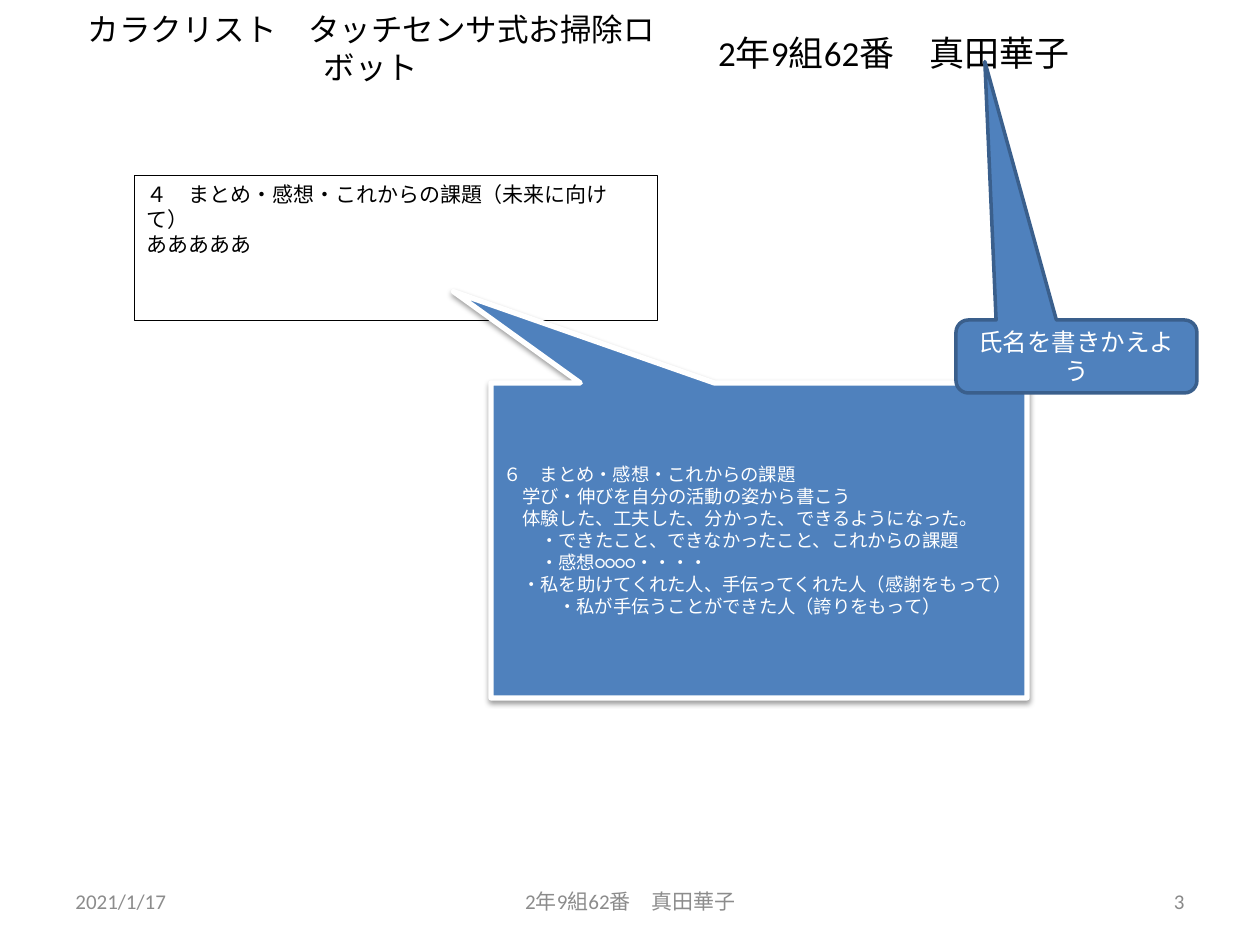
from dataclasses import dataclass

from lxml.etree import SubElement
from pptx import Presentation
from pptx.dml.color import RGBColor
from pptx.enum.shapes import MSO_SHAPE
from pptx.enum.text import MSO_ANCHOR, MSO_AUTO_SIZE, PP_ALIGN
from pptx.oxml.ns import qn
from pptx.util import Emu, Pt

SCALE = 914400 / 126
LATIN = "Calibri"
JAPANESE = "Noto Sans CJK JP"
COLOURS = {
    "black": "000000",
    "white": "FFFFFF",
    "blue": "4F81BD",
    "navy": "3A5F8C",
    "grey": "8C8C8C",
    "page_number": "898989",
}
STUDENT = "2年9組62番　真田華子"


@dataclass
class Line:
    text: str
    left: int = 0
    first: int = 0


@dataclass
class Label:
    place: tuple[int, int, int, int]
    lines: list[Line]
    size: float
    colour: str
    align: PP_ALIGN = PP_ALIGN.LEFT
    anchor: MSO_ANCHOR = MSO_ANCHOR.MIDDLE
    font: str = LATIN


@dataclass
class Panel:
    label: Label
    kind: MSO_SHAPE
    fill: str
    line: str
    width: float
    adjustments: tuple[float, ...] = ()
    shadow: bool = False


def px(value: int) -> Emu:
    return Emu(round(value * SCALE))


def rgb(name: str) -> RGBColor:
    return RGBColor.from_string(COLOURS[name])


def set_all(target, values: dict) -> None:
    for name, value in values.items():
        setattr(target, name, value)


def write(box, label: Label) -> None:
    frame = box.text_frame
    set_all(frame, {
        "word_wrap": True,
        "auto_size": MSO_AUTO_SIZE.NONE,
        "vertical_anchor": label.anchor,
    })
    for index, line in enumerate(label.lines):
        para = frame.add_paragraph() if index else frame.paragraphs[0]
        para.alignment = label.align
        if line.left or line.first:
            properties = para._p.get_or_add_pPr()
            properties.set("marL", str(px(line.left)))
            properties.set("indent", str(px(line.first)))
        span = para.add_run()
        span.text = line.text
        set_all(span.font, {"name": label.font, "size": Pt(label.size)})
        span.font.color.rgb = rgb(label.colour)
        SubElement(span.font._element, qn("a:ea"), typeface=label.font)


def draw_label(page, label: Label) -> None:
    write(page.shapes.add_textbox(*map(px, label.place)), label)


def add_shadow(shape) -> None:
    effects = shape._element.spPr.find(qn("a:effectLst"))
    shadow = SubElement(effects, qn("a:outerShdw"), blurRad=str(Pt(3.1)),
                        dist=str(Pt(1.6)), dir="5400000", rotWithShape="0")
    colour = SubElement(shadow, qn("a:srgbClr"), val=COLOURS["black"])
    SubElement(colour, qn("a:alpha"), val="38000")


def draw_panel(page, panel: Panel) -> None:
    shape = page.shapes.add_shape(panel.kind, *map(px, panel.label.place))
    for index, value in enumerate(panel.adjustments):
        shape.adjustments[index] = value
    shape.fill.solid()
    shape.fill.fore_color.rgb = rgb(panel.fill)
    shape.line.color.rgb = rgb(panel.line)
    shape.line.width = Pt(panel.width)
    shape.shadow.inherit = False
    if panel.shadow:
        add_shadow(shape)
    write(shape, panel.label)


def draw_title(page, label: Label) -> None:
    title = page.shapes.title
    set_all(title, dict(zip(("left", "top", "width", "height"), map(px, label.place))))
    write(title, label)
    page.shapes._spTree.append(title._element)


FOOTERS = [
    Label((63, 876, 294, 50), [Line("2021/1/17")], 12, "grey"),
    Label((431, 876, 399, 50), [Line(STUDENT)], 12, "grey", PP_ALIGN.CENTER),
    Label((903, 876, 294, 50), [Line("3")], 12, "page_number", PP_ALIGN.RIGHT),
]
SUMMARY = Panel(
    Label((134, 175, 523, 145), [
        Line("４　まとめ・感想・これからの課題（未来に向けて）"),
        Line("あああああ"),
    ], 12, "black", anchor=MSO_ANCHOR.TOP),
    MSO_SHAPE.RECTANGLE, "white", "black", 0.25)
GUIDE = Panel(
    Label((491, 383, 536, 315), [
        Line("６　まとめ・感想・これからの課題"),
        Line("学び・伸びを自分の活動の姿から書こう", 0, 19),
        Line("体験した、工夫した、分かった、できるようになった。", 19),
        Line("・できたこと、できなかったこと、これからの課題", 0, 37),
        Line("・感想○○○○・・・・", 0, 37),
        Line("・私を助けてくれた人、手伝ってくれた人（感謝をもって）", 37, -18),
        Line("・私が手伝うことができた人（誇りをもって）", 0, 55),
    ], 10.5, "white"),
    MSO_SHAPE.RECTANGULAR_CALLOUT, "blue", "white", 3, (-0.57, -0.79), True)
TITLE = Label((63, 24, 616, 48), [Line("カラクリスト　タッチセンサ式お掃除ロボット")],
              18, "black", PP_ALIGN.CENTER, font=JAPANESE)
NAME = Label((635, 14, 518, 77), [Line(STUDENT)], 20, "black", PP_ALIGN.CENTER)
NAME_HINT = Panel(
    Label((956, 320, 241, 73), [Line("氏名を書きかえよう")], 14, "white", PP_ALIGN.CENTER),
    MSO_SHAPE.ROUNDED_RECTANGULAR_CALLOUT, "blue", "navy", 2, (-0.38, -4.04, 0.17))


def main() -> None:
    deck = Presentation()
    set_all(deck, {"slide_width": px(1260), "slide_height": px(945)})
    page = deck.slides.add_slide(deck.slide_layouts[5])
    for footer in FOOTERS:
        draw_label(page, footer)
    draw_panel(page, SUMMARY)
    draw_panel(page, GUIDE)
    draw_title(page, TITLE)
    draw_label(page, NAME)
    draw_panel(page, NAME_HINT)
    deck.save("out.pptx")


if __name__ == "__main__":
    main()
